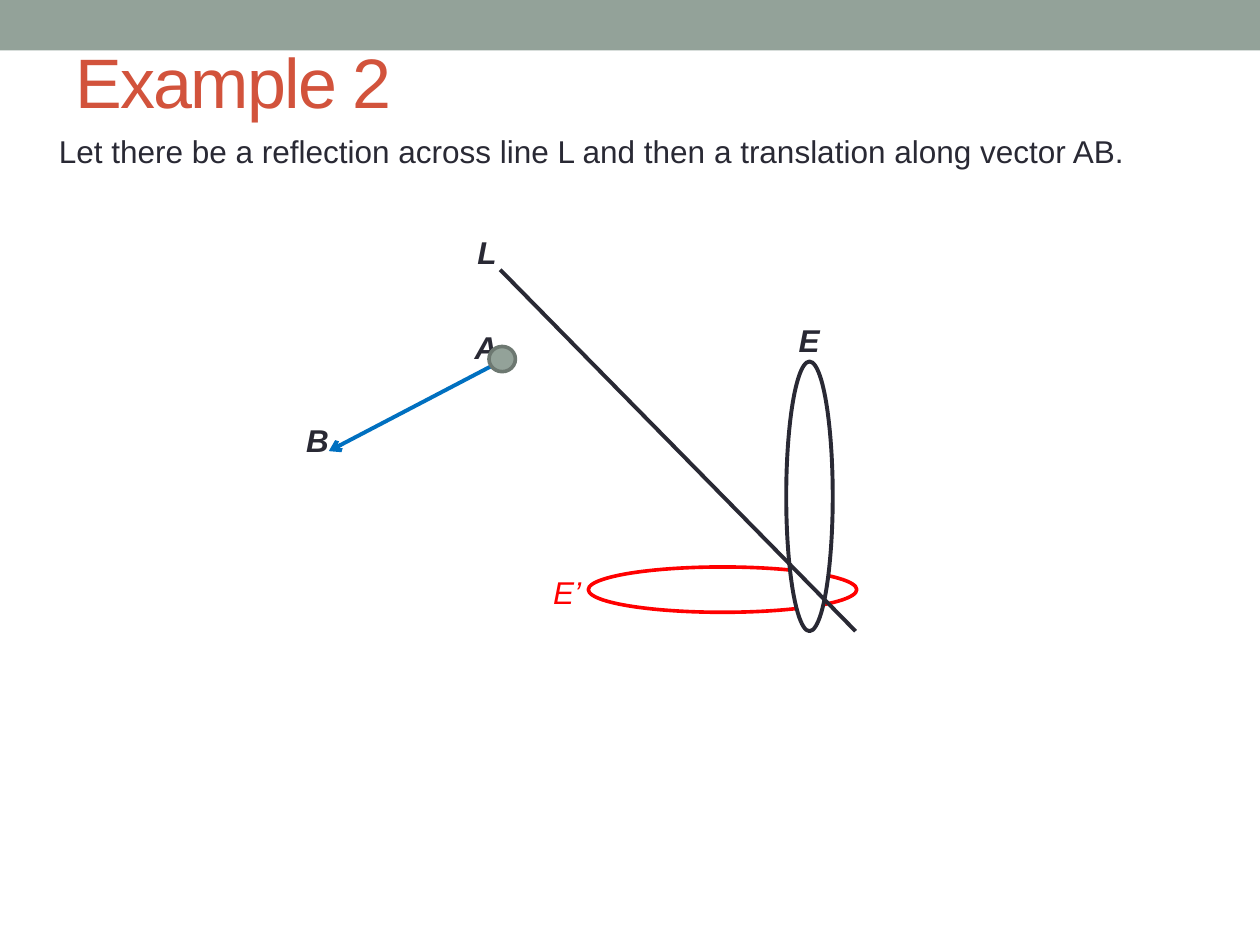
import pptx
import pptx.util
import pptx.dml.color
import pptx.enum.shapes
import pptx.enum.text
import pptx.oxml
import pptx.oxml.ns
from dataclasses import dataclass

Pt = pptx.util.Pt
Kind = pptx.enum.shapes.MSO_SHAPE


@dataclass(frozen=True)
class Theme:
    font: str = "Arial"
    title: int = 40
    body: int = 18
    ink: str = "292934"
    accent: str = "D2533C"
    sage: str = "93A299"
    edge: str = "6D7871"
    image: str = "FF0000"
    vector: str = "0070C0"
    paper: str = "FFFFFF"
    thick: float = 2.25
    medium: float = 2.08
    thin: float = 0.75


def rgb(code):
    return pptx.dml.color.RGBColor.from_string(code)


def write(shape, text, size, color, font, bold=False, italic=False, track=0, top=3.6):
    """Put left-aligned, top-anchored text in a shape; track is letter spacing."""
    frame = shape.text_frame
    frame.word_wrap = True
    frame.vertical_anchor = pptx.enum.text.MSO_ANCHOR.TOP
    frame.margin_left = frame.margin_right = Pt(7.2)
    frame.margin_top, frame.margin_bottom = Pt(top), Pt(3.6)
    para = frame.paragraphs[0]
    para.alignment = pptx.enum.text.PP_ALIGN.LEFT
    run = para.add_run()
    run.text = text
    run.font.name, run.font.size = font, Pt(size)
    run.font.bold, run.font.italic = bold, italic
    run.font.color.rgb = rgb(color)
    if track:
        for props in shape.element.iter(pptx.oxml.ns.qn("a:rPr")):
            props.set("spc", str(track * 100))


class Deck:
    def __init__(self, theme):
        self.theme = theme
        self.file = pptx.Presentation()
        self.file.slide_width, self.file.slide_height = Pt(720), Pt(540)
        self.slide = self.file.slides.add_slide(self.file.slide_layouts[6])

    def shape(self, kind, box, fill=None, line=None, width=0):
        item = self.slide.shapes.add_shape(kind, *map(Pt, box))
        item.shadow.inherit = False
        if fill:
            item.fill.solid()
            item.fill.fore_color.rgb = rgb(fill)
        else:
            item.fill.background()
        if line:
            item.line.color.rgb = rgb(line)
            item.line.width = Pt(width)
        else:
            item.line.fill.background()
        return item

    def text(self, box, text, **style):
        item = self.slide.shapes.add_textbox(*map(Pt, box))
        write(item, text, font=self.theme.font, **style)

    def label(self, x, y, text):
        self.text((x, y, 29.5, 29), text, size=self.theme.body,
                  color=self.theme.ink, bold=True, italic=True)

    def line(self, start, end, color, arrow=False):
        item = self.slide.shapes.add_connector(
            pptx.enum.shapes.MSO_CONNECTOR.STRAIGHT, *map(Pt, start + end))
        item.line.color.rgb = rgb(color)
        item.line.width = Pt(self.theme.thick)
        if arrow:
            tail = pptx.oxml.parse_xml(
                f'<a:tailEnd {pptx.oxml.ns.nsdecls("a")} type="arrow"/>')
            item.line.fill  # the a:ln element exists once colour is set
            item.element.spPr.find(pptx.oxml.ns.qn("a:ln")).append(tail)
        item.element.spPr.append(pptx.oxml.parse_xml(
            f'<a:effectLst {pptx.oxml.ns.nsdecls("a")}/>'))


def main():
    look = Theme()
    deck = Deck(look)

    deck.shape(Kind.RECTANGLE, (0, 0, 720, 28.8), fill=look.sage)
    deck.text((36, 17.3, 648, 77.8), "Example 2", size=look.title,
              color=look.accent, track=-1, top=4.8)
    deck.text((26.6, 72, 672.5, 29),
              "Let there be a reflection across line L and then a translation along vector AB.",
              size=look.body, color=look.ink)

    prime = deck.shape(Kind.RECTANGLE, (309, 324, 45.4, 29),
                       line=look.paper, width=look.thin)
    write(prime, "E’", look.body, look.image, look.font, italic=True)
    deck.shape(Kind.OVAL, (336.2, 324, 153.4, 25.9),
               look.paper, look.image, look.medium)
    deck.shape(Kind.OVAL, (449.3, 206.6, 26.6, 154.1),
               look.paper, look.ink, look.thick)
    deck.label(449.3, 180, "E")

    deck.line((285.8, 206.6), (187.9, 257.8), look.vector, arrow=True)
    deck.label(167.8, 236.9, "B")
    deck.label(264.2, 183.6, "A")

    deck.line((285.8, 154.1), (488.9, 360.7), look.ink)
    deck.label(265.7, 129.6, "L")

    deck.shape(Kind.FLOWCHART_CONNECTOR, (279.4, 198, 15.1, 14.4),
               look.sage, look.edge, look.medium)

    deck.file.save("out.pptx")


if __name__ == "__main__":
    main()
